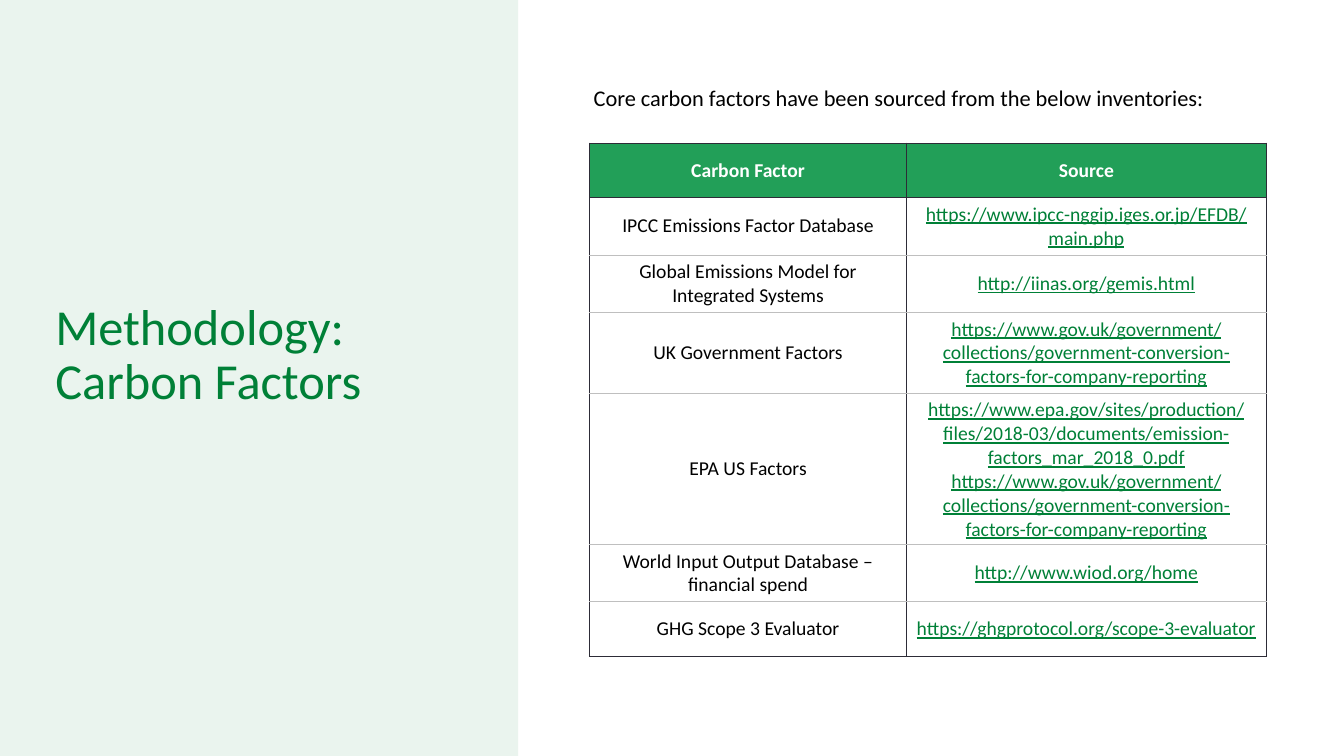
from pptx import Presentation
from pptx.dml.color import RGBColor
from pptx.enum.shapes import MSO_SHAPE as Shape
from pptx.enum.text import MSO_ANCHOR as Anchor, PP_ALIGN as Align
from pptx.oxml.ns import qn
from pptx.util import Emu, Pt
from lxml.etree import SubElement

EMU_PER_PX = 9144
FONT = "Calibri"
COLORS = {
    "panel": "EAF4EE",
    "green": "008037",
    "header": "229F58",
    "white": "FFFFFF",
    "black": "000000",
    "frame": "2D2C37",
    "rule": "BFBFBF",
}
GOVERNMENT_LINK = (
    "https://www.gov.uk/government/collections/"
    "government-conversion-factors-for-company-reporting"
)
EPA_LINK = (
    "https://www.epa.gov/sites/production/files/2018-03/documents/"
    "emission-factors_mar_2018_0.pdf"
)
FACTORS = [
    ("Carbon Factor", "Source", 54),
    ("IPCC Emissions Factor Database", "https://www.ipcc-nggip.iges.or.jp/EFDB/main.php", 57),
    ("Global Emissions Model for Integrated Systems", "http://iinas.org/gemis.html", 57),
    ("UK Government Factors", GOVERNMENT_LINK, 80),
    ("EPA US Factors", f"{EPA_LINK}\n{GOVERNMENT_LINK}", 150),
    ("World Input Output Database – financial spend", "http://www.wiod.org/home", 57),
    ("GHG Scope 3 Evaluator", "https://ghgprotocol.org/scope-3-evaluator", 54),
]
COLUMN_WIDTHS = (314, 357)


def px(length):
    """Turn pixels into EMU."""
    return Emu(length * EMU_PER_PX)


def rgb(name):
    """Look up a named colour."""
    return RGBColor.from_string(COLORS[name])


def write(text_frame, text, size, color, align=Align.LEFT, bold=False, underline=False):
    """Fill a text frame with evenly formatted text."""
    text_frame.text = text
    text_frame.word_wrap = True
    for paragraph in text_frame.paragraphs:
        paragraph.alignment = align
        for run in paragraph.runs:
            font = run.font
            font.name, font.size = FONT, Pt(size)
            font.bold, font.underline = bold, underline
            font.color.rgb = rgb(color)


def add_text(slide, box, text, size, color):
    """Add a wrapped text box and return its frame."""
    text_frame = slide.shapes.add_textbox(*map(px, box)).text_frame
    write(text_frame, text, size, color)
    return text_frame


def add_title_panel(slide, left, top, width, height):
    """Draw the tinted panel with the slide title centred in its height."""
    panel = slide.shapes.add_shape(Shape.RECTANGLE, *map(px, (left, top, width, height)))
    panel.shadow.inherit = False
    panel.fill.solid()
    panel.fill.fore_color.rgb = rgb("panel")
    panel.line.fill.background()
    title_height = 121
    title_top = top + (height - title_height) // 2 - 21
    title = add_text(slide, (left + 45, title_top, 423, title_height),
                     "Methodology: Carbon Factors", 36, "green")
    title.vertical_anchor = Anchor.MIDDLE
    title.paragraphs[0].line_spacing = 0.9


def set_borders(cell, colors):
    """Rule the left, right, top and bottom edges of a cell."""
    properties = cell._tc.get_or_add_tcPr()
    for edge, color in zip("LRTB", colors):
        line = SubElement(properties, qn(f"a:ln{edge}"), w=str(Pt(0.75)))
        fill = SubElement(line, qn("a:solidFill"))
        SubElement(fill, qn("a:srgbClr"), val=COLORS[color])


def format_cell(cell, text, row, column):
    """Write and style one cell of the factor table."""
    header = row == 0
    link = column == 1 and not header
    color = "white" if header else "green" if link else "black"
    write(cell.text_frame, text, 14, color, Align.CENTER, header, link)
    cell.vertical_anchor = Anchor.MIDDLE
    top = "frame" if row <= 1 else "rule"
    bottom = "frame" if row in (0, len(FACTORS) - 1) else "rule"
    set_borders(cell, ("frame", "frame", top, bottom))
    if header:
        cell.fill.solid()
        cell.fill.fore_color.rgb = rgb("header")
    else:
        cell.fill.background()


def add_factor_table(slide, left, top, width):
    """Place the introduction and the table of factor sources below it."""
    add_text(slide, (left, top, width, 37),
             "Core carbon factors have been sourced from the below inventories:", 16, "black")
    table_height = sum(height for *_, height in FACTORS)
    frame = slide.shapes.add_table(
        len(FACTORS), len(COLUMN_WIDTHS),
        *map(px, (left + 6, top + 63, sum(COLUMN_WIDTHS), table_height)))
    table = frame.table
    table.horz_banding = False
    for column, column_width in zip(table.columns, COLUMN_WIDTHS):
        column.width = px(column_width)
    for row, (*texts, height) in enumerate(FACTORS):
        table.rows[row].height = px(height)
        for column, text in enumerate(texts):
            format_cell(table.cell(row, column), text, row, column)


def main():
    """Build and save the slide."""
    presentation = Presentation()
    presentation.slide_width, presentation.slide_height = px(1333), px(750)
    slide = presentation.slides.add_slide(presentation.slide_layouts[6])
    add_title_panel(slide, 0, 0, 514, 750)
    add_factor_table(slide, 579, 79, 683)
    presentation.save("out.pptx")


if __name__ == "__main__":
    main()
